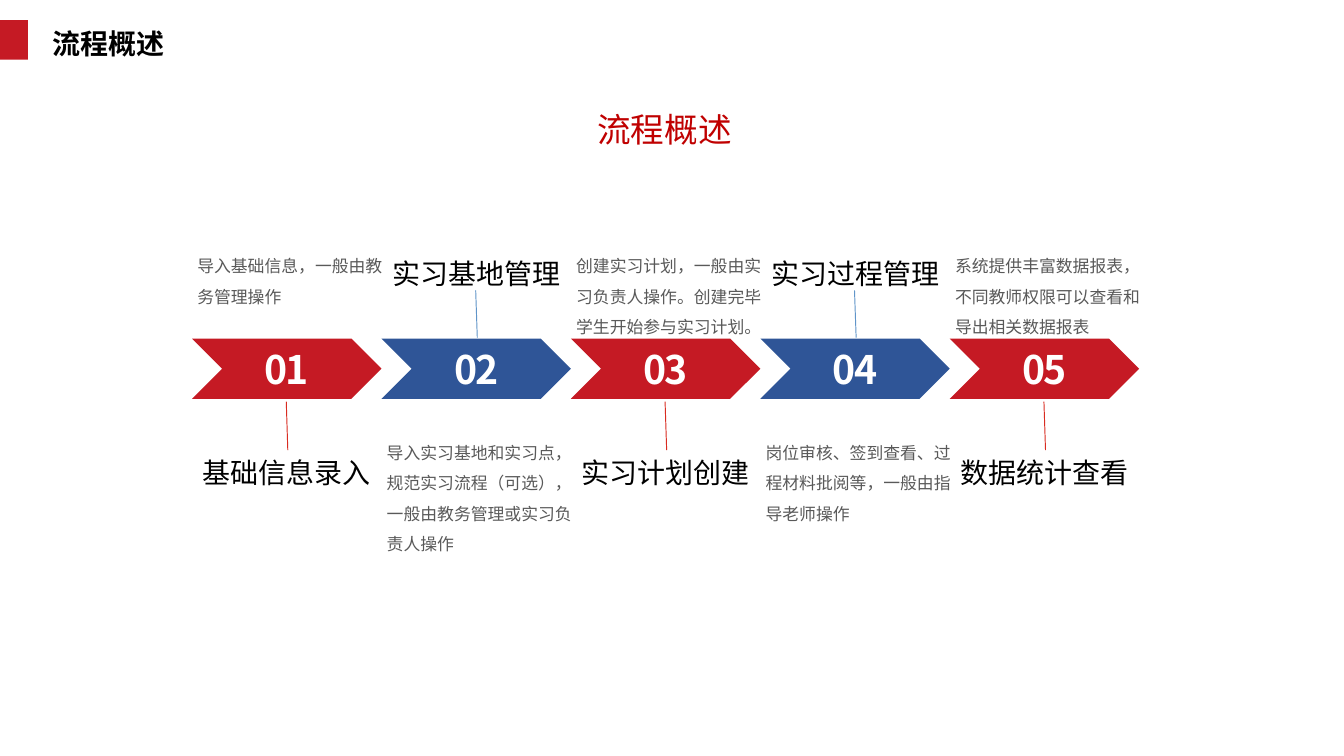
from dataclasses import dataclass

from lxml import etree
from pptx import Presentation
from pptx import util as u
from pptx.dml.color import RGBColor
from pptx.enum import shapes, text
from pptx.oxml import ns


@dataclass(frozen=True)
class Theme:
    font: str = "Noto Sans CJK SC"
    red: str = "C51A24"
    blue: str = "2F5597"
    red_line: str = "D92C21"
    blue_line: str = "6095C9"
    title: str = "C00000"
    black: str = "000000"
    gray: str = "595959"
    white: str = "FFFFFF"
    title_size: int = 18
    heading_size: int = 15
    body_size: int = 9
    number_size: int = 21


THEME = Theme()
FIRST_LEFT = 3.63
STEP_WIDTH = 3.58
STEP_TOP = 6.4
STEP_HEIGHT = 1.14

STEPS = [
    ("基础信息录入", "导入基础信息，一般由教务管理操作", 2),
    ("实习基地管理", "导入实习基地和实习点，规范实习流程（可选），一般由教务管理或实习负责人操作", 4),
    ("实习计划创建", "创建实习计划，一般由实习负责人操作。创建完毕学生开始参与实习计划。", 3),
    ("实习过程管理", "岗位审核、签到查看、过程材料批阅等，一般由指导老师操作", 3),
    ("数据统计查看", "系统提供丰富数据报表，不同教师权限可以查看和导出相关数据报表", 3),
]


def add_block(slide, kind, left, top, width, height, color):
    shape = slide.shapes.add_shape(kind, u.Cm(left), u.Cm(top), u.Cm(width), u.Cm(height))
    shape.shadow.inherit = False
    shape.fill.solid()
    shape.fill.fore_color.rgb = RGBColor.from_string(color)
    shape.line.fill.background()


def add_text(slide, content, left, top, width, height, size, color, bold=False,
             centered=True, line_spacing=1.0, inset=(0.13, 0.1), tracking=None):
    box = slide.shapes.add_textbox(u.Cm(left), u.Cm(top), u.Cm(width), u.Cm(height))
    frame = box.text_frame
    frame.text = content
    frame.word_wrap = True
    frame.auto_size = text.MSO_AUTO_SIZE.SHAPE_TO_FIT_TEXT
    frame.margin_left = frame.margin_right = u.Cm(inset[0])
    frame.margin_top = frame.margin_bottom = u.Cm(inset[1])
    paragraph = frame.paragraphs[0]
    paragraph.alignment = text.PP_ALIGN.CENTER if centered else text.PP_ALIGN.LEFT
    paragraph.line_spacing = line_spacing
    run = paragraph.runs[0]
    run.font.name = THEME.font
    run.font.size = u.Pt(size)
    run.font.bold = bold
    run.font.color.rgb = RGBColor.from_string(color)
    properties = run._r.get_or_add_rPr()
    latin = properties.find(ns.qn("a:latin"))
    east_asian = etree.Element(ns.qn("a:ea"), typeface=THEME.font)
    latin.addnext(east_asian)
    if tracking is not None:
        properties.set("spc", str(tracking))


def add_link(slide, center, top, bottom, color):
    connector = slide.shapes.add_connector(
        shapes.MSO_CONNECTOR.STRAIGHT,
        u.Cm(center - 0.01), u.Cm(top), u.Cm(center + 0.02), u.Cm(bottom))
    connector.line.color.rgb = RGBColor.from_string(color)
    connector.line.width = u.Pt(0.5)
    etree.SubElement(connector._element.spPr, ns.qn("a:effectLst"))


def add_step(slide, index, heading, description, line_count):
    left = FIRST_LEFT + index * STEP_WIDTH
    center = left + STEP_WIDTH / 2
    heading_below = index % 2 == 0
    if heading_below:
        fill, line = THEME.red, THEME.red_line
        heading_top, description_top, link_top, link_bottom = 8.51, 4.55, 7.59, 8.51
    else:
        fill, line = THEME.blue, THEME.blue_line
        heading_top, description_top, link_top, link_bottom = 4.75, 8.08, 5.49, 6.38
    add_block(slide, shapes.MSO_SHAPE.CHEVRON, left, STEP_TOP, STEP_WIDTH, STEP_HEIGHT, fill)
    add_text(slide, f"{index + 1:02d}", center - 0.45, 6.53, 0.9, 0.89,
             THEME.number_size, THEME.white, bold=True, inset=(0, 0), tracking=-110)
    add_text(slide, heading, left - 0.1, heading_top, 3.78, 0.84,
             THEME.heading_size, THEME.black)
    add_text(slide, description, left - 0.03, description_top, 3.96, 0.2 + 0.57 * line_count,
             THEME.body_size, THEME.gray, centered=False, line_spacing=1.5)
    add_link(slide, center, link_top, link_bottom, line)


def main():
    presentation = Presentation()
    presentation.slide_width = u.Cm(25.4)
    presentation.slide_height = u.Cm(14.29)
    slide = presentation.slides.add_slide(presentation.slide_layouts[6])
    add_block(slide, shapes.MSO_SHAPE.RECTANGLE, 0, 0.38, 0.53, 0.75, THEME.red)
    add_text(slide, "流程概述", 0.86, 0.38, 7.44, 0.89, THEME.heading_size, THEME.black,
             bold=True, centered=False, inset=(0.13, 0.13))
    add_text(slide, "流程概述", 7.72, 1.96, 9.68, 0.97, THEME.title_size, THEME.title)
    for index, step in enumerate(STEPS):
        add_step(slide, index, *step)
    presentation.save("out.pptx")


if __name__ == "__main__":
    main()
